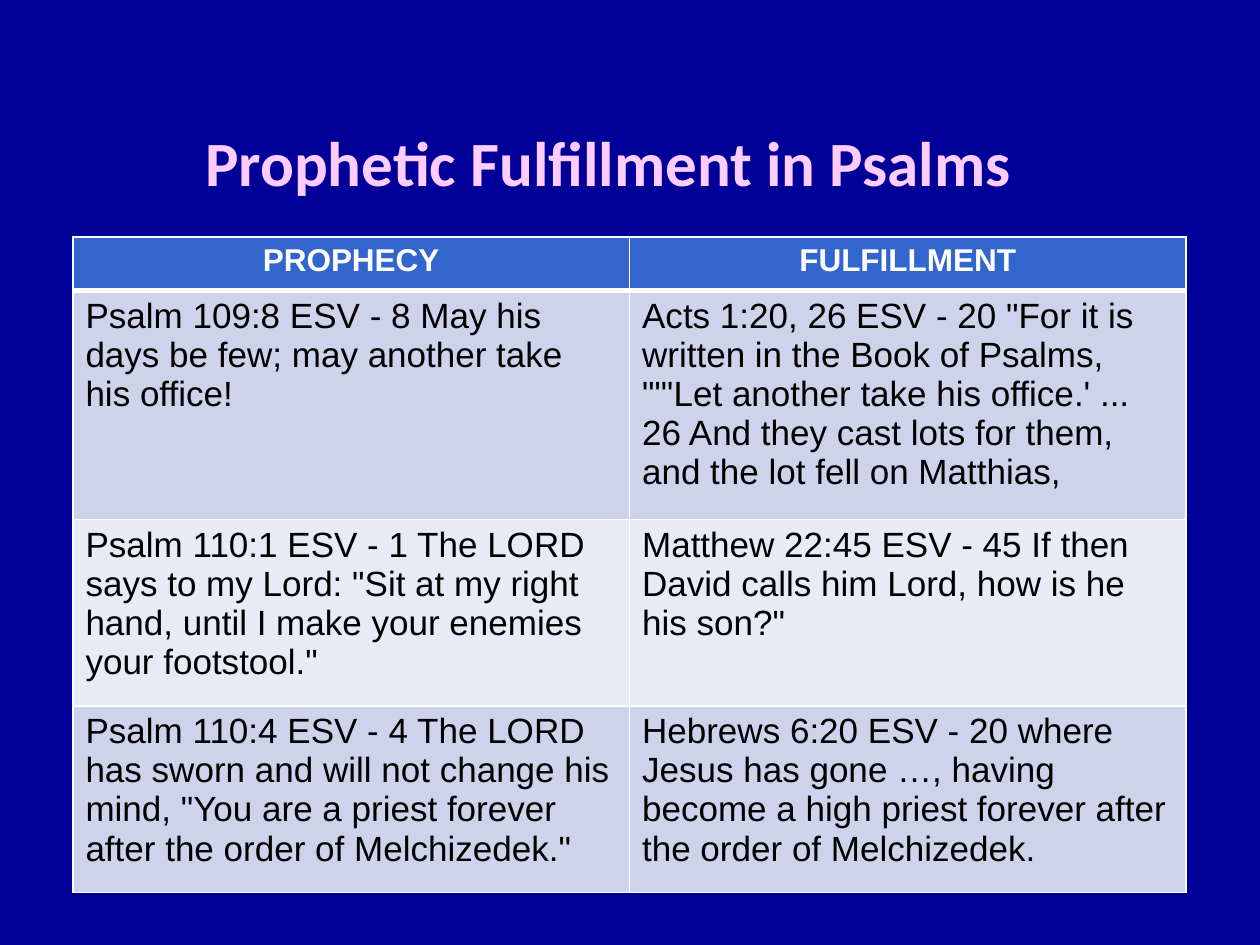
from lxml import etree
from pptx import Presentation
from pptx.dml.color import RGBColor
from pptx.enum.text import MSO_ANCHOR, PP_ALIGN
from pptx.oxml.ns import qn
from pptx.util import Cm, Pt

MID = MSO_ANCHOR.MIDDLE
LEFT, CENTER = PP_ALIGN.LEFT, PP_ALIGN.CENTER
WHITE, BLACK, NAVY = "FFFFFF", "000000", "000099"
PINK, BLUE = "FFCCFF", "3366CC"
BANDS = ("CED3EC", "E8EAF6")
HEIGHTS = (1.07, 4.62, 3.76, 3.76)
ROWS = (
    ("PROPHECY", "FULFILLMENT"),
    ("Psalm 109:8 ESV - 8 May his days be few; may another take his office!",
     "Acts 1:20, 26 ESV - 20 \"For it is written in the Book of Psalms, "
     "\"\"'Let another take his office.' ... 26 And they cast lots for them, "
     "and the lot fell on Matthias,"),
    ("Psalm 110:1 ESV - 1 The LORD says to my Lord: \"Sit at my right hand, "
     "until I make your enemies your footstool.\"",
     "Matthew 22:45 ESV - 45 If then David calls him Lord, how is he his son?\""),
    ("Psalm 110:4 ESV - 4 The LORD has sworn and will not change his mind, "
     "\"You are a priest forever after the order of Melchizedek.\"",
     "Hebrews 6:20 ESV - 20 where Jesus has gone …, having become a high "
     "priest forever after the order of Melchizedek."),
)


def paint(fill, tone):
    """Make a fill solid in a hex colour."""
    fill.solid()
    fill.fore_color.rgb = RGBColor.from_string(tone)


def write(frame, text, size=20, face="Arial", tone=BLACK, bold=False, align=LEFT):
    """Put one formatted paragraph in a text frame."""
    para = frame.paragraphs[0]
    para.alignment = align
    run = para.add_run()
    run.text = text
    font = run.font
    font.size, font.name, font.bold = Pt(size), face, bold
    font.color.rgb = RGBColor.from_string(tone)


def edge(cell, side, width):
    """Draw one white border of a cell."""
    line = etree.SubElement(cell._tc.get_or_add_tcPr(), qn(f"a:ln{side}"), w=str(Pt(width)))
    fill = etree.SubElement(line, qn("a:solidFill"))
    etree.SubElement(fill, qn("a:srgbClr"), val=WHITE)


def add_title(slide):
    """Place and fill the title."""
    title = slide.shapes.title
    title.left, title.top = Cm(1.47), Cm(1.7)
    title.width, title.height = Cm(21.59), Cm(3.1)
    title.text_frame.vertical_anchor = MID
    write(title.text_frame, "Prophetic Fulfillment in Psalms", size=36,
          face="Calibri", tone=PINK, bold=True, align=CENTER)


def add_verses(slide):
    """Build the table of prophecies and fulfillments."""
    table = slide.shapes.add_table(len(ROWS), 2, Cm(1.47), Cm(4.78),
                                   Cm(22.44), Cm(sum(HEIGHTS))).table
    for row, (texts, height) in enumerate(zip(ROWS, HEIGHTS)):
        table.rows[row].height = Cm(height)
        head = row == 0
        look = dict(size=18, tone=WHITE, bold=True, align=CENTER) if head else {}
        for col, text in enumerate(texts):
            cell = table.cell(row, col)
            write(cell.text_frame, text, **look)
            for side in "LRTB":
                thick = (row, side) in ((0, "B"), (1, "T"))
                edge(cell, side, 3 if thick else 1)
            paint(cell.fill, BLUE if head else BANDS[(row - 1) % 2])


def main():
    """Build and save the slide."""
    deck = Presentation()
    deck.slide_width, deck.slide_height = Cm(25.4), Cm(19.05)
    slide = deck.slides.add_slide(deck.slide_layouts[5])
    paint(slide.background.fill, NAVY)
    add_title(slide)
    add_verses(slide)
    deck.save("out.pptx")


if __name__ == "__main__":
    main()
